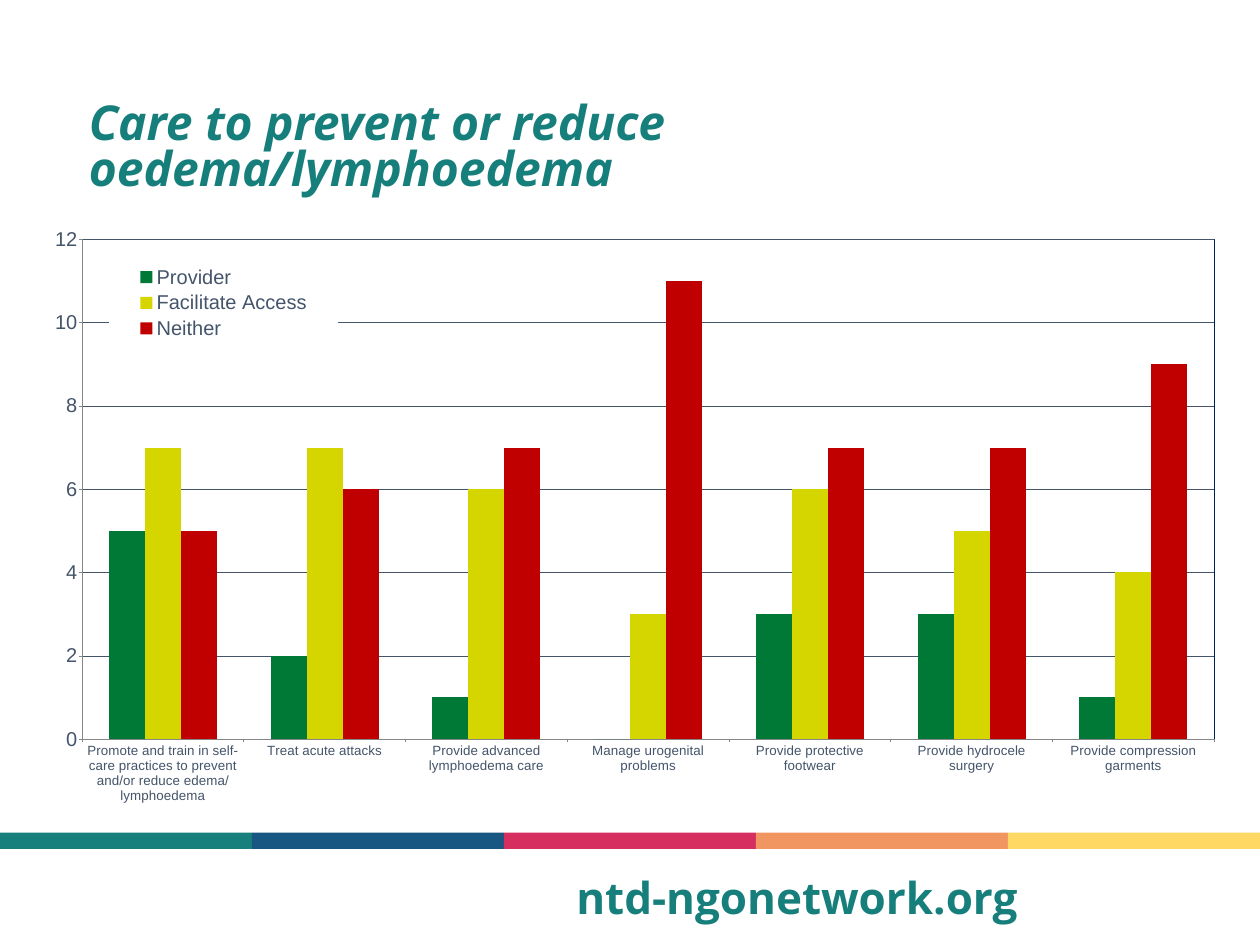
from lxml import etree
from pptx import Presentation
from pptx.chart.data import CategoryChartData
from pptx.dml.color import RGBColor
from pptx.enum.chart import XL_CHART_TYPE as ChartType, XL_LEGEND_POSITION as LegendPosition, XL_TICK_MARK as TickMark
from pptx.enum.shapes import MSO_SHAPE as Preset
from pptx.enum.text import MSO_ANCHOR as Anchor
from pptx.oxml import parse_xml
from pptx.oxml.ns import nsdecls, qn
from pptx.util import Cm, Pt

COLORS = {
    "teal": "17807C", "blue": "175781", "pink": "D62F5F", "orange": "F29661",
    "yellow": "FFD863", "heading": "177F7B", "slate": "44546A", "axis": "868686",
    "border": "002060", "white": "FFFFFF", "Provider": "007936",
    "Facilitate Access": "D5D600", "Neither": "C00000",
}
SLIDE_WIDTH, SLIDE_HEIGHT = 66.68, 50.01
CHART_LEFT, CHART_TOP, CHART_WIDTH, CHART_HEIGHT = 2, 12, 63, 32


def style_font(font, size, color, name="Arial", bold=False, italic=False):
    values = {"size": Pt(size), "name": name, "bold": bold, "italic": italic}
    for attribute, value in values.items():
        setattr(font, attribute, value)
    font.color.rgb = RGBColor.from_string(COLORS[color])


def chart_layout(left, top, width, height, inner=False):
    layout = parse_xml(f"<c:layout {nsdecls('c')}><c:manualLayout/></c:layout>")
    values = {"layoutTarget": "inner"} if inner else {}
    values |= {
        "xMode": "edge", "yMode": "edge",
        "x": (left - CHART_LEFT) / CHART_WIDTH, "y": (top - CHART_TOP) / CHART_HEIGHT,
        "w": width / CHART_WIDTH, "h": height / CHART_HEIGHT,
    }
    for tag, value in values.items():
        etree.SubElement(layout[0], qn(f"c:{tag}")).set("val", str(value))
    return layout


presentation = Presentation()
presentation.slide_width = Cm(SLIDE_WIDTH)
presentation.slide_height = Cm(SLIDE_HEIGHT)
slide = presentation.slides.add_slide(presentation.slide_layouts[6])

strip_width = SLIDE_WIDTH / 5
for index, color in enumerate(["teal", "blue", "pink", "orange", "yellow"]):
    strip = slide.shapes.add_shape(
        Preset.RECTANGLE, Cm(index * strip_width), Cm(44.07), Cm(strip_width), Cm(0.86))
    strip.shadow.inherit = False
    strip.fill.solid()
    strip.fill.fore_color.rgb = RGBColor.from_string(COLORS[color])
    strip.line.fill.background()

texts = [
    ("Care to prevent or reduce oedema/lymphoedema", (4.7, 5.49, 57.25, 5.6), 72, True, 0.8, Anchor.TOP),
    ("ntd-ngonetwork.org", (30.5, 45.34, 28.5, 5.03 - 0.4), 66, False, 0.9, Anchor.MIDDLE),
]
for text, bounds, size, italic, spacing, anchor in texts:
    box = slide.shapes.add_textbox(*map(Cm, bounds))
    frame = box.text_frame
    frame_values = {
        "word_wrap": True, "vertical_anchor": anchor, "margin_left": 0,
        "margin_right": 0, "margin_top": 0, "margin_bottom": 0,
    }
    for attribute, value in frame_values.items():
        setattr(frame, attribute, value)
    paragraph = frame.paragraphs[0]
    paragraph.line_spacing = spacing
    run = paragraph.add_run()
    run.text = text
    style_font(run.font, size, "heading", "Open Sans", True, italic)

data = CategoryChartData()
data.categories = [
    "Promote and train in self-care practices to prevent and/or reduce edema/lymphoedema",
    "Treat acute attacks",
    "Provide advanced lymphoedema care",
    "Manage urogenital problems",
    "Provide protective footwear",
    "Provide hydrocele surgery",
    "Provide compression garments",
]
data.add_series("Provider", [5, 2, 1, 0, 3, 3, 1])
data.add_series("Facilitate Access", [7, 7, 6, 3, 6, 5, 4])
data.add_series("Neither", [5, 6, 7, 11, 7, 7, 9])
chart = slide.shapes.add_chart(
    ChartType.COLUMN_CLUSTERED, Cm(CHART_LEFT), Cm(CHART_TOP),
    Cm(CHART_WIDTH), Cm(CHART_HEIGHT), data).chart
chart.has_title = False
style_font(chart.font, 20, "slate")

plot = chart.plots[0]
for attribute, value in {"gap_width": 150, "overlap": 0, "vary_by_categories": False}.items():
    setattr(plot, attribute, value)
for series in plot.series:
    series.format.fill.solid()
    series.format.fill.fore_color.rgb = RGBColor.from_string(COLORS[series.name])

for axis, size in [(chart.category_axis, 20), (chart.value_axis, 30)]:
    style_font(axis.tick_labels.font, size, "slate")
    axis.major_tick_mark = TickMark.OUTSIDE
    axis.format.line.color.rgb = RGBColor.from_string(COLORS["axis"])
    axis.format.line.width = Pt(0.75)
for attribute, value in {"minimum_scale": 0, "maximum_scale": 12, "major_unit": 2}.items():
    setattr(chart.value_axis, attribute, value)
gridline = chart.value_axis.major_gridlines.format.line
gridline.color.rgb = RGBColor.from_string(COLORS["slate"])
gridline.width = Pt(0.75)

chart.has_legend = True
chart.legend.position = LegendPosition.RIGHT
chart.legend.include_in_layout = False
style_font(chart.legend.font, 30, "slate")

plot_area = chart.element.find(".//" + qn("c:plotArea"))
legend = chart.element.find(".//" + qn("c:legend"))
layouts = [
    (plot_area, 0, chart_layout(4.34, 12.66, 59.92, 26.46, True)),
    (legend, 1, chart_layout(5.77, 13.9, 12.12, 4.25)),
]
for parent, position, layout in layouts:
    for existing in parent.findall(qn("c:layout")):
        parent.remove(existing)
    parent.insert(position, layout)
plot_area.append(parse_xml(
    f'<c:spPr {nsdecls("c", "a")}><a:noFill/><a:ln w="9525"><a:solidFill>'
    f'<a:srgbClr val="{COLORS["border"]}"/></a:solidFill></a:ln></c:spPr>'))
legend.find(qn("c:overlay")).addnext(parse_xml(
    f'<c:spPr {nsdecls("c", "a")}><a:solidFill><a:srgbClr val="{COLORS["white"]}"/>'
    f'</a:solidFill><a:ln><a:noFill/></a:ln></c:spPr>'))

presentation.save("out.pptx")
